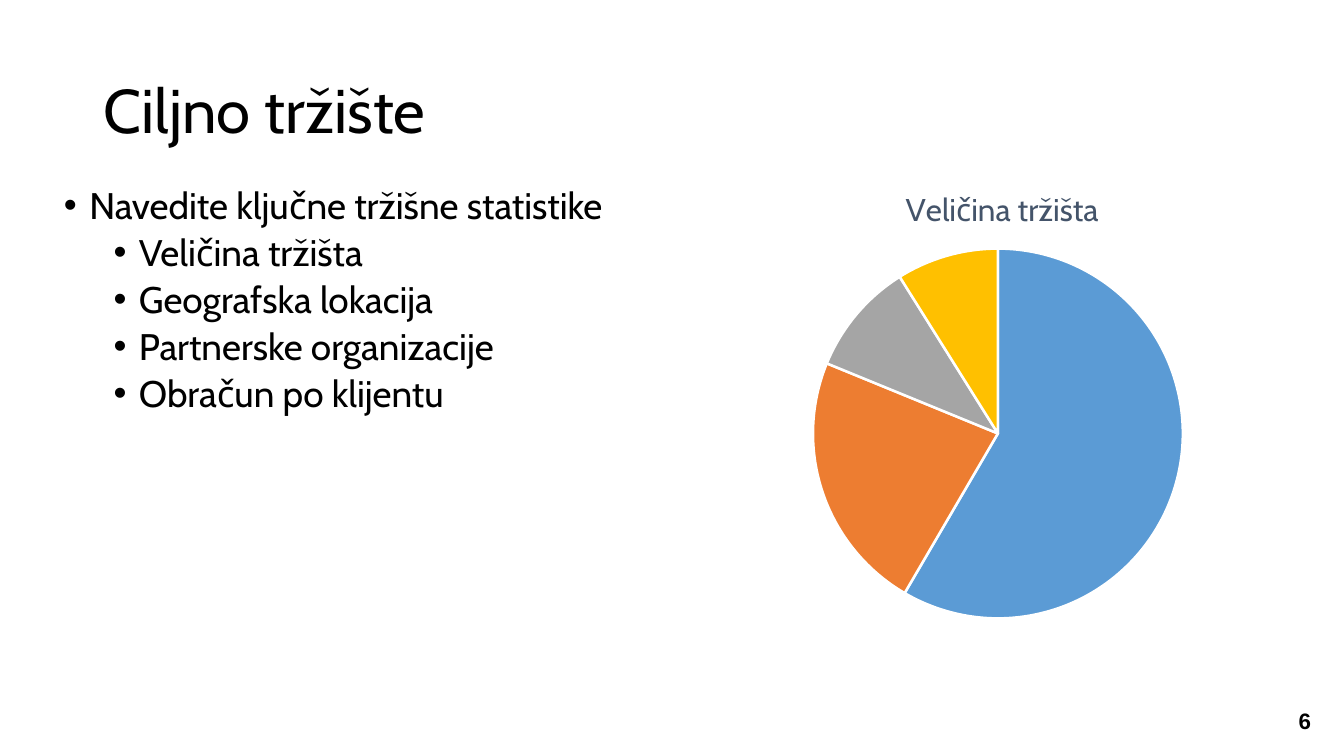
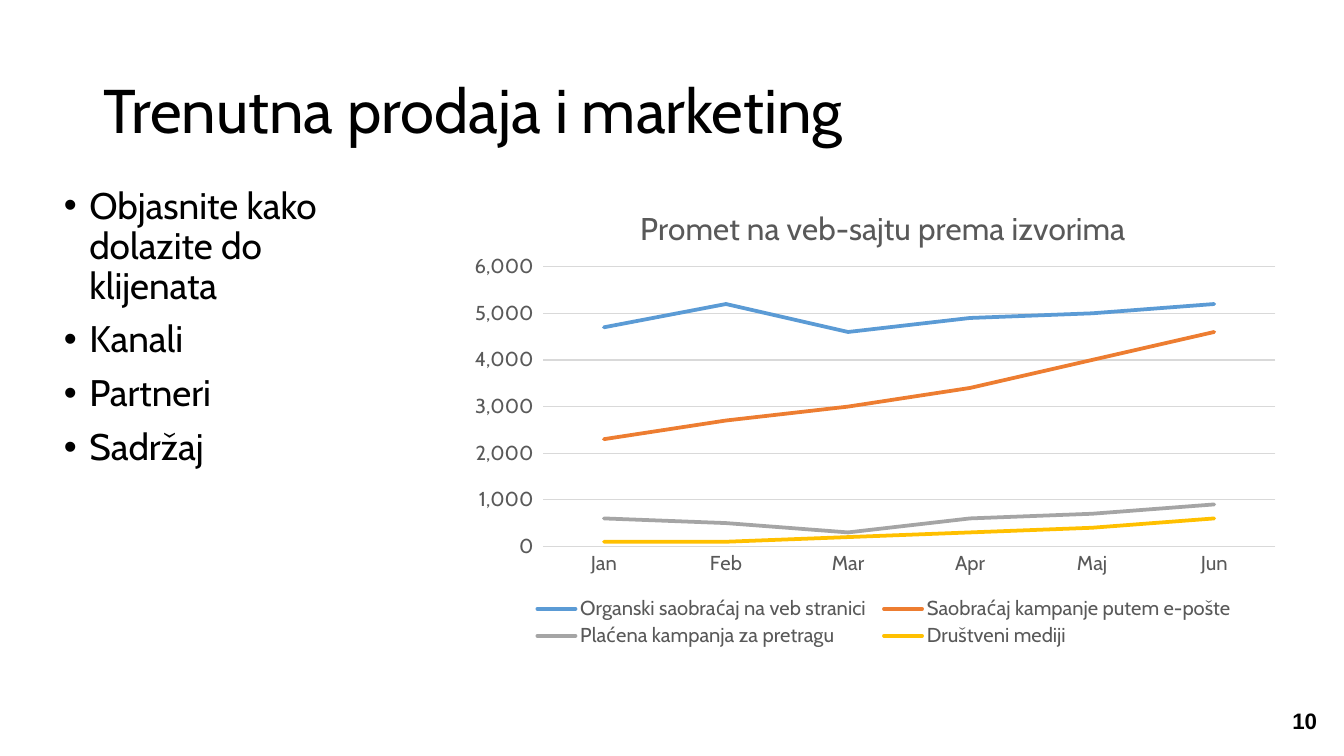
from lxml import etree
from pptx import Presentation
from pptx import util as u
from pptx.chart.data import CategoryChartData
from pptx.dml.color import RGBColor
from pptx.enum import chart as charts, text
from pptx.oxml import ns

# Shared look
WIDTH, HEIGHT = u.Inches(11.11), u.Inches(6.25)
FONT = "Cabin"
BLACK, WHITE, GREY, SLATE, GRID = "000000", "FFFFFF", "595959", "44546A", "D9D9D9"
ACCENTS = ["5B9BD5", "ED7D31", "A5A5A5", "FFC000"]

TITLE_FONT = {"size": u.Pt(36.7), "name": FONT, "color": BLACK}
BODY_FONT = {"size": u.Pt(22), "name": FONT, "color": BLACK}
NUMBER_FONT = {"size": u.Pt(13.3), "name": "Arial", "color": BLACK, "bold": True}
LABEL_FONT = {"size": u.Pt(12), "name": FONT, "color": GREY, "bold": False}
CHART_TITLE_FONT = {"size": u.Pt(18.67), "name": FONT, "bold": False}

# Boxes: left, top, width, height in percent of the slide
TITLE_BOX = (6.84, 5.28, 86.23, 19.36)
NUMBER_BOX = (94.15, 93.76, 5.85, 3.36)

# Bullet levels: left indent in inches, space before in points
HANGING = 0.21
LEVELS = [(0.21, 8.3), (0.62, 4.2)]


def color(value):
    return RGBColor.from_string(value)


def place(box):
    """Turn percentages of the slide into lengths."""
    return [int(share * side / 100) for share, side in zip(box, (WIDTH, HEIGHT) * 2)]


def set_font(font, formats):
    for name, value in formats.items():
        if name == "color":
            font.color.rgb = color(value)
        else:
            setattr(font, name, value)


def set_line(line, value, width):
    line.color.rgb = color(value)
    line.width = u.Pt(width)


def add_text(slide, box, lines, font, anchor, inset=None):
    """Add a text box and return its paragraphs."""
    frame = slide.shapes.add_textbox(*place(box)).text_frame
    frame.word_wrap = True
    frame.vertical_anchor = anchor
    if inset is not None:
        for side in ("left", "top", "right", "bottom"):
            setattr(frame, "margin_" + side, inset)
    frame.text = "\n".join(lines)
    for paragraph in frame.paragraphs:
        set_font(paragraph.runs[0].font, font)
    return frame.paragraphs


def add_frame(presentation, title, number):
    """Add a slide with its title and number."""
    slide = presentation.slides.add_slide(presentation.slide_layouts[6])
    heading, = add_text(slide, TITLE_BOX, [title], TITLE_FONT, text.MSO_ANCHOR.MIDDLE)
    heading.line_spacing = 0.9
    label, = add_text(slide, NUMBER_BOX, [str(number)], NUMBER_FONT,
                      text.MSO_ANCHOR.BOTTOM, inset=0)
    label.alignment = text.PP_ALIGN.CENTER
    return slide


def add_bullets(slide, box, items):
    """Add a bullet list of (level, wording) pairs."""
    paragraphs = add_text(slide, box, [wording for _, wording in items],
                          BODY_FONT, text.MSO_ANCHOR.TOP)
    for paragraph, (level, _) in zip(paragraphs, items):
        indent, space = LEVELS[level]
        paragraph.level = level
        paragraph.line_spacing = 0.9
        paragraph.space_before = u.Pt(space)
        properties = paragraph._p.get_or_add_pPr()
        properties.set("marL", str(u.Inches(indent)))
        properties.set("indent", str(-u.Inches(HANGING)))
        etree.SubElement(properties, ns.qn("a:buFont")).set("typeface", "Arial")
        etree.SubElement(properties, ns.qn("a:buChar")).set("char", "•")


def set_layout(parent, after=None, inner=False, **shares):
    """Fix a chart part's place as shares of the chart."""
    for old in parent.findall(ns.qn("c:layout")):
        parent.remove(old)
    layout = etree.Element(ns.qn("c:layout"))
    manual = etree.SubElement(layout, ns.qn("c:manualLayout"))
    settings = {"layoutTarget": "inner"} if inner else {}
    settings.update(xMode="edge", yMode="edge", **shares)
    for name, value in settings.items():
        etree.SubElement(manual, ns.qn("c:" + name)).set("val", str(value))
    if after:
        parent.find(ns.qn(after)).addnext(layout)
    else:
        parent.insert(0, layout)


def add_chart(slide, box, kind, title, title_color, title_left, plot, categories, series):
    """Add a chart with a placed title and plot area."""
    data = CategoryChartData()
    data.categories = categories
    for name, values in series:
        data.add_series(name, values)
    chart = slide.shapes.add_chart(kind, *place(box), data).chart
    set_font(chart.font, {"size": u.Pt(10), "name": FONT, "color": BLACK})
    chart.has_legend = False
    chart.has_title = True
    chart.chart_title.include_in_layout = False
    frame = chart.chart_title.text_frame
    frame.text = title
    set_font(frame.paragraphs[0].runs[0].font, {**CHART_TITLE_FONT, "color": title_color})
    set_layout(chart.chart_title._element, "c:tx", x=title_left, y=0.04)
    set_layout(chart._chartSpace.chart.plotArea, inner=True, **plot)
    return chart


def add_pie(slide, box, title, values):
    chart = add_chart(slide, box, charts.XL_CHART_TYPE.PIE, title, SLATE, 0.34,
                      {"x": 0.19, "y": 0.18, "w": 0.63, "h": 0.78},
                      [str(index + 1) for index in range(len(values))],
                      [("Series 1", values)])
    chart.plots[0].vary_by_categories = True
    for index, accent in enumerate(ACCENTS):
        slice_format = chart.series[0].points[index].format
        slice_format.fill.solid()
        slice_format.fill.fore_color.rgb = color(accent)
        set_line(slice_format.line, WHITE, 1.5)


def add_lines(slide, box, title, categories, series):
    chart = add_chart(slide, box, charts.XL_CHART_TYPE.LINE, title, GREY, 0.21,
                      {"x": 0.1, "y": 0.18, "w": 0.88, "h": 0.59}, categories, series)
    chart.plots[0].vary_by_categories = False
    for line, accent in zip(chart.series, ACCENTS):
        line.smooth = False
        line.marker.style = charts.XL_MARKER_STYLE.NONE
        set_line(line.format.line, accent, 2.25)
        line.format.line._get_or_add_ln().set("cap", "rnd")

    # Axes
    for axis in (chart.category_axis, chart.value_axis):
        axis.major_tick_mark = axis.minor_tick_mark = charts.XL_TICK_MARK.NONE
        set_font(axis.tick_labels.font, LABEL_FONT)
    set_line(chart.category_axis.format.line, GRID, 0.75)
    scale = chart.value_axis
    scale.minimum_scale, scale.maximum_scale, scale.major_unit = 0, 6000, 1000
    scale.format.line.fill.background()
    scale.has_major_gridlines = True
    set_line(scale.major_gridlines.format.line, GRID, 0.75)
    scale.tick_labels.number_format = r"#,##0_);\(#,##0\)"
    scale.tick_labels.number_format_is_linked = False

    # Legend
    chart.has_legend = True
    chart.legend.position = charts.XL_LEGEND_POSITION.BOTTOM
    chart.legend.include_in_layout = False
    set_font(chart.legend.font, LABEL_FONT)
    set_layout(chart.legend._element, "c:legendPos", x=0.08, y=0.87, w=0.86, h=0.12)


def build_market(presentation):
    slide = add_frame(presentation, "Ciljno tržište", 6)
    add_bullets(slide, (3.87, 24, 44.1, 62.72), [
        (0, "Navedite ključne tržišne statistike"),
        (1, "Veličina tržišta"),
        (1, "Geografska lokacija"),
        (1, "Partnerske organizacije"),
        (1, "Obračun po klijentu"),
    ])
    add_pie(slide, (51.94, 21.6, 44.19, 62.72), "Veličina tržišta", [59, 23, 10, 9])


def build_sales(presentation):
    slide = add_frame(presentation, "Trenutna prodaja i marketing", 10)
    add_bullets(slide, (3.87, 24, 26.19, 62.72), [
        (0, "Objasnite kako dolazite do klijenata"),
        (0, "Kanali"),
        (0, "Partneri"),
        (0, "Sadržaj"),
    ])
    add_lines(slide, (34.2, 24, 61.93, 62.72), "Promet na veb-sajtu prema izvorima",
              ["Jan", "Feb", "Mar", "Apr", "Maj", "Jun"], [
        ("Organski saobraćaj na veb stranici", [4700, 5200, 4600, 4900, 5000, 5200]),
        ("Saobraćaj kampanje putem e-pošte", [2300, 2700, 3000, 3400, 4000, 4600]),
        ("Plaćena kampanja za pretragu", [600, 500, 300, 600, 700, 900]),
        ("Društveni mediji", [100, 100, 200, 300, 400, 600]),
    ])


def main():
    presentation = Presentation()
    presentation.slide_width, presentation.slide_height = WIDTH, HEIGHT
    build_market(presentation)
    build_sales(presentation)
    presentation.save("out.pptx")


if __name__ == "__main__":
    main()
